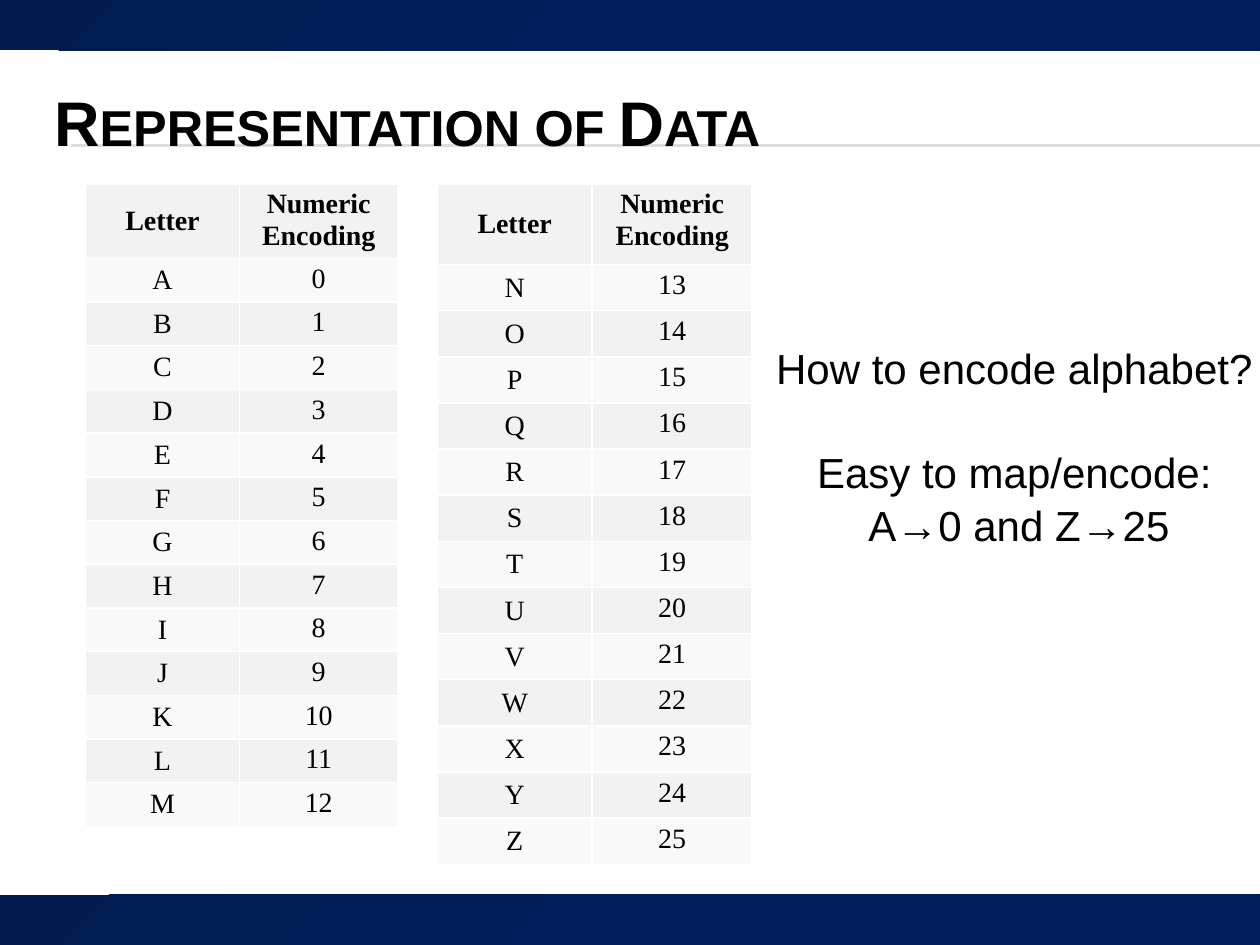
from lxml import etree
from pptx import Presentation
from pptx.dml.color import RGBColor
from pptx.enum.shapes import MSO_CONNECTOR, MSO_SHAPE
from pptx.enum.text import MSO_ANCHOR, PP_ALIGN
from pptx.oxml.ns import qn
from pptx.util import Inches, Pt

LINE = MSO_CONNECTOR.STRAIGHT
RECT = MSO_SHAPE.RECTANGLE
TOP, MIDDLE = MSO_ANCHOR.TOP, MSO_ANCHOR.MIDDLE
LEFT, CENTER = PP_ALIGN.LEFT, PP_ALIGN.CENTER

COLORS = {
    "text": "000000",
    "band_dark": "011B4E",
    "band": "011F5B",
    "rule": "DDDDDD",
    "row_dark": "F2F2F2",
    "row_light": "F9F9F9",
    "border": "FFFFFF",
}


def rgb(name):
    return RGBColor.from_string(COLORS[name])


def add_text(p, text, font, size, align, bold=False):
    p.alignment = align
    r = p.add_run()
    r.text = text
    r.font.name = font
    r.font.size = Pt(size)
    r.font.bold = bold
    r.font.color.rgb = rgb("text")
    return r


def add_band(s, x, y, w, h):
    sp = s.shapes.add_shape(RECT, Inches(x), Inches(y), Inches(w), Inches(h))
    sp.shadow.inherit = False
    sp.line.fill.background()
    sp.fill.gradient()
    sp.fill.gradient_angle = 315
    stops = zip(sp.fill.gradient_stops, (0, 0.5), ("band_dark", "band"))
    for stop, position, color in stops:
        stop.position = position
        stop.color.rgb = rgb(color)


def add_rule(s, x, y, w):
    line = s.shapes.add_connector(
        LINE, Inches(x), Inches(y), Inches(x + w), Inches(y))
    line.line.color.rgb = rgb("rule")
    line.line.width = Pt(0.75)
    etree.SubElement(line._element.spPr, qn("a:effectLst"))


def add_title(s, x, y, w, h):
    title = s.shapes.title
    title.left, title.top = Inches(x), Inches(y)
    title.width, title.height = Inches(w), Inches(h)
    tf = title.text_frame
    tf.vertical_anchor = MIDDLE
    r = add_text(tf.paragraphs[0], "Representation of Data", "Arial", 36, LEFT, True)
    r._r.get_or_add_rPr().set("cap", "small")
    s.shapes._spTree.append(title._element)


def set_borders(cell):
    tcPr = cell._tc.get_or_add_tcPr()
    for i, side in enumerate(("a:lnL", "a:lnR", "a:lnT", "a:lnB")):
        ln = etree.Element(qn(side), w=str(Pt(1)))
        fill = etree.SubElement(ln, qn("a:solidFill"))
        etree.SubElement(fill, qn("a:srgbClr"), val=COLORS["border"])
        tcPr.insert(i, ln)


def add_code_table(s, x, y, w, h, letter_w, header_h, first):
    codes = [(chr(ord("A") + n), str(n)) for n in range(first, first + 13)]
    rows = [("Letter", "Numeric Encoding")] + codes
    frame = s.shapes.add_table(
        len(rows), 2, Inches(x), Inches(y), Inches(w), Inches(h))
    table = frame.table
    table.horz_banding = False
    table.columns[0].width = Inches(letter_w)
    table.columns[1].width = Inches(w - letter_w)
    row_h = (h - header_h) / len(codes)
    for i, row in enumerate(rows):
        table.rows[i].height = Inches(row_h if i else header_h)
        for j, text in enumerate(row):
            cell = table.cell(i, j)
            cell.margin_left = cell.margin_right = Inches(0.05)
            cell.margin_top = cell.margin_bottom = Inches(0.04)
            cell.vertical_anchor = TOP if j else MIDDLE
            cell.fill.solid()
            cell.fill.fore_color.rgb = rgb("row_light" if i % 2 else "row_dark")
            set_borders(cell)
            add_text(cell.text_frame.paragraphs[0], text,
                     "Times New Roman", 16, CENTER, i == 0)


def add_question(s, x, y, w, h):
    tf = s.shapes.add_textbox(
        Inches(x), Inches(y), Inches(w), Inches(h)).text_frame
    tf.word_wrap = False
    lines = [
        ("How to encode alphabet?", 0),
        ("Easy to map/encode:", 29),
        (" A→0 and Z→25", 0),
    ]
    for i, (text, gap) in enumerate(lines):
        p = tf.add_paragraph() if i else tf.paragraphs[0]
        p.line_spacing = 1.05
        p.space_before = Pt(gap)
        add_text(p, text, "Arial", 24, CENTER)


def main():
    prs = Presentation()
    prs.slide_width, prs.slide_height = Inches(10), Inches(7.5)
    s = prs.slides.add_slide(prs.slide_layouts[5])
    for y in (1.15, 1.16):
        add_rule(s, 0.56, y, 9.44)
    for y in (0, 7.1):
        add_band(s, 0, y, 10, 0.4)
    add_title(s, 0.33, 0.5, 9.5, 0.92)
    add_code_table(s, 0.68, 1.46, 2.48, 5.1, 1.22, 0.59, 0)
    add_question(s, 6.04, 2.65, 4.02, 2.12)
    add_code_table(s, 3.47, 1.46, 2.5, 5.4, 1.23, 0.64, 13)
    prs.save("out.pptx")


if __name__ == "__main__":
    main()
